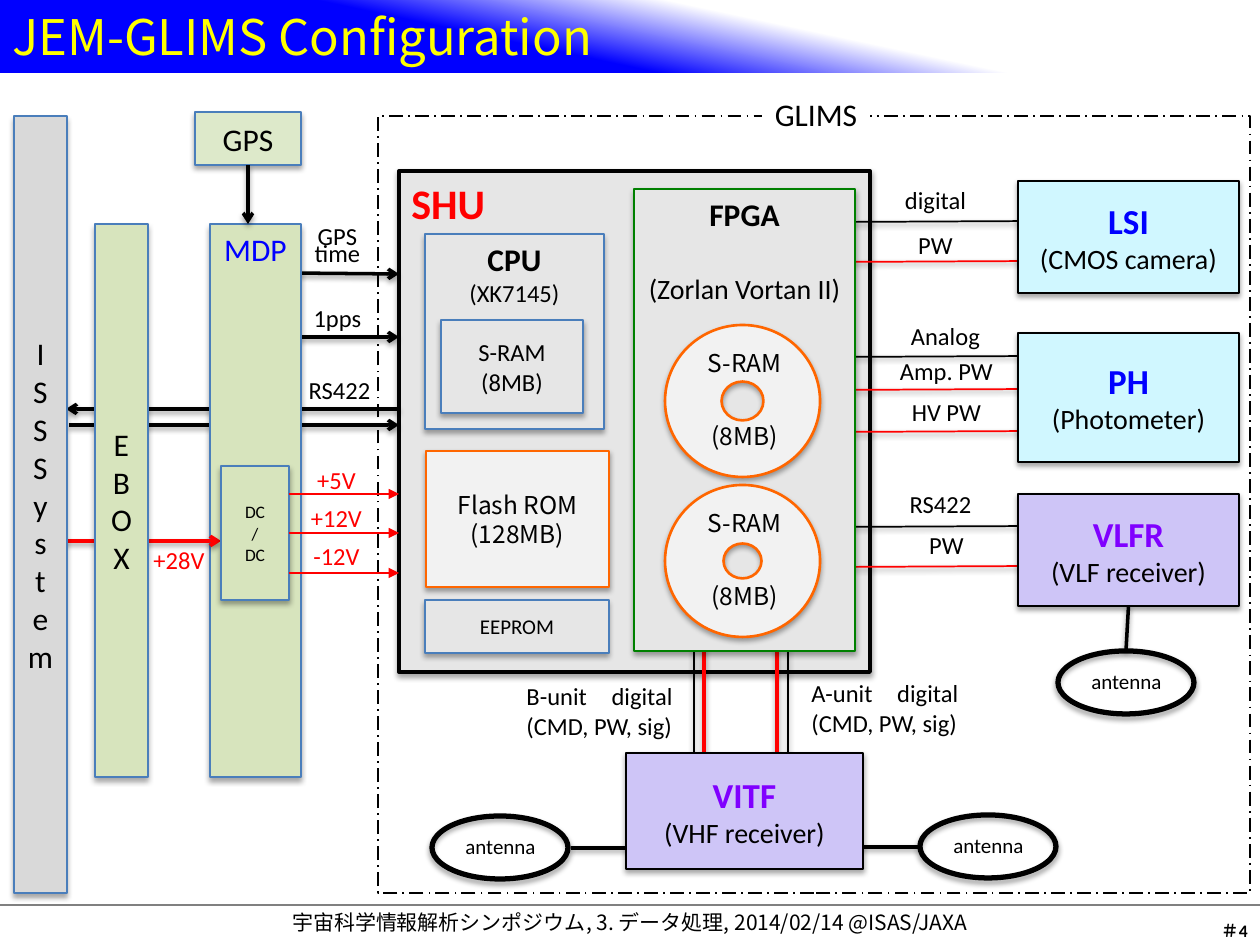
from dataclasses import dataclass

from lxml import etree
from pptx import Presentation
from pptx import util as u
from pptx.dml.color import RGBColor
from pptx.enum import dml, shapes, text
from pptx.oxml.ns import qn

MSO = shapes.MSO_SHAPE
LEFT, CENTER, RIGHT = text.PP_ALIGN.LEFT, text.PP_ALIGN.CENTER, text.PP_ALIGN.RIGHT
TOP, MIDDLE = text.MSO_ANCHOR.TOP, text.MSO_ANCHOR.MIDDLE


@dataclass(frozen=True)
class Theme:
    latin: str = "Calibri"
    cjk: str = "Noto Sans CJK JP"
    black: str = "000000"
    white: str = "FFFFFF"
    red: str = "FF0000"
    blue: str = "0000FF"
    purple: str = "8000FF"
    yellow: str = "FFFF00"
    orange: str = "FF6600"
    green: str = "008000"
    rule: str = "808080"
    edge: str = "4A7EBB"
    board: str = "E6E6E6"
    memory: str = "F2F2F2"
    station: str = "D9D9D9"
    bus: str = "D7E4BD"
    gps: str = "DDE9CA"
    optical: str = "D0F7FF"
    radio: str = "CEC5F7"
    title: int = 28
    heading: int = 24
    unit: int = 20
    block: int = 18
    detail: int = 16
    label: int = 14
    small: int = 12
    tiny: int = 10


T = Theme()


def px(n):
    return u.Emu(round(n * 914400 / 126))


def rgb(value):
    return RGBColor.from_string(value)


def write(tf, paragraphs, size=T.label, color=T.black, bold=False, font=T.latin,
          align=CENTER, anchor=TOP, wrap=True, spacing=None, vert=None):
    """Fill a frame; a paragraph is a string or (string, format overrides)."""
    tf.word_wrap, tf.vertical_anchor = wrap, anchor
    if vert:
        tf._txBody.bodyPr.set("vert", vert)
    if isinstance(paragraphs, str):
        paragraphs = [paragraphs]
    for i, item in enumerate(paragraphs):
        words, own = (item, {}) if isinstance(item, str) else item
        p = tf.paragraphs[0] if i == 0 else tf.add_paragraph()
        p.alignment = align
        if spacing:
            p.line_spacing = u.Pt(spacing)
        if "before" in own:
            p.space_before = u.Pt(own["before"])
        r = p.add_run()
        r.text = words
        r.font.name = font
        r.font.size = u.Pt(own.get("size", size))
        r.font.bold = own.get("bold", bold)
        r.font.color.rgb = rgb(own.get("color", color))
        etree.SubElement(r._r.get_or_add_rPr(), qn("a:ea"), typeface=font)


class Diagram:
    def __init__(self, slide):
        self.s = slide

    def effects(self, sp, shadow, alpha, dist):
        spPr = sp._element.spPr
        for old in spPr.findall(qn("a:effectLst")):
            spPr.remove(old)
        lst = etree.SubElement(spPr, qn("a:effectLst"))
        if shadow:
            out = etree.SubElement(lst, qn("a:outerShdw"), blurRad=str(u.Pt(3.1)),
                                   dist=str(u.Pt(dist)), dir="5400000", rotWithShape="0")
            clr = etree.SubElement(out, qn("a:srgbClr"), val=T.black)
            etree.SubElement(clr, qn("a:alpha"), val=str(alpha * 1000))

    def shape(self, x, y, w, h, fill=None, line=T.edge, width=0.75, kind=MSO.RECTANGLE,
              words=None, shadow=True, dash=None, adj=None, **fmt):
        sp = self.s.shapes.add_shape(kind, px(x), px(y), px(w), px(h))
        if fill:
            sp.fill.solid()
            sp.fill.fore_color.rgb = rgb(fill)
        else:
            sp.fill.background()
        if line:
            sp.line.color.rgb = rgb(line)
            sp.line.width = u.Pt(width)
            if dash:
                sp.line.dash_style = dash
        else:
            sp.line.fill.background()
        if adj:
            sp.adjustments[0] = adj
        sp.shadow.inherit = False
        self.effects(sp, shadow, 35, 1.8)
        if words:
            write(sp.text_frame, words, **fmt)
        return sp

    def label(self, x, y, w, h, words, **fmt):
        write(self.s.shapes.add_textbox(px(x), px(y), px(w), px(h)).text_frame, words, **fmt)

    def line(self, x1, y1, x2, y2, color=T.black, width=2, head=None, shadow=True,
             begin=None, end=None):
        c = self.s.shapes.add_connector(shapes.MSO_CONNECTOR.STRAIGHT,
                                        px(x1), px(y1), px(x2), px(y2))
        c.line.color.rgb = rgb(color)
        c.line.width = u.Pt(width)
        if begin:
            c.begin_connect(*begin)
        if end:
            c.end_connect(*end)
        if head:
            etree.SubElement(c._element.spPr.find(qn("a:ln")), qn("a:tailEnd"), type=head)
        self.effects(c, shadow, 38, 1.6)

    def unit(self, x, y, w, h, name, role, fill, color):
        return self.shape(x, y, w, h, fill, T.black, 1.5, anchor=MIDDLE, size=T.detail,
                          words=[(name, dict(size=T.unit, color=color, bold=True)), role])

    def antenna(self, x, y):
        sp = self.shape(x, y, 136, 63, line=T.black, width=3, kind=MSO.OVAL)
        self.label(x + 20, y + 11, 97, 38, "antenna", size=T.small, wrap=False)
        return sp

    def banner(self, w, h, words):
        sp = self.shape(0, 0, w, h, T.blue, None, shadow=False)
        sp.fill.gradient()
        sp.fill.gradient_angle = 78
        for stop, (color, at) in zip(sp.fill.gradient_stops, [(T.blue, 0.41), (T.white, 0.63)]):
            stop.color.rgb, stop.position = rgb(color), at
        self.label(0, 0, 799, 72, words, size=T.title, color=T.yellow, font=T.cjk, align=LEFT)


def main():
    prs = Presentation()
    prs.slide_width, prs.slide_height = px(1260), px(945)
    d = Diagram(prs.slides.add_slide(prs.slide_layouts[6]))

    # Title and footer
    d.banner(1260, 73, "JEM-GLIMS Configuration")
    d.line(0, 905, 1260, 905, T.rule, 0.75, shadow=False)
    d.label(42, 903, 1176, 38, "宇宙科学情報解析シンポジウム, 3. データ処理, 2014/02/14 @ISAS/JAXA",
            size=T.small, font=T.cjk)
    d.label(906, 914, 354, 34, "＃4", size=T.tiny, bold=True, align=RIGHT)

    # GLIMS boundary
    d.shape(378, 116, 872, 777, line=T.black, width=1, shadow=False,
            dash=dml.MSO_LINE.LONG_DASH_DOT)
    d.shape(762, 89, 108, 50, T.white, None, shadow=False, words="GLIMS", size=T.block,
            wrap=False)

    # SHU board
    d.shape(399, 171, 471, 501, T.board, T.black, 2.25, words="SHU", size=T.heading,
            color=T.red, bold=True, align=LEFT)

    # Signals from FPGA to the sensors: label, its left and top, line height, colour
    for words, x, y, at, color in [
            ("digital", 861, 179, 221, T.black), ("PW", 861, 224, 261, T.red),
            ("Analog", 871, 315, 356, T.black), ("Amp. PW", 872, 350, 389, T.red),
            ("HV PW", 872, 391, 431, T.red),
            ("RS422", 866, 483, 526, T.black), ("PW", 872, 524, 566, T.red)]:
        d.line(1038, at, 833, at + 1, color, 1)
        d.label(x, y, 149, 42, words)

    # Signals from FPGA to VITF
    for x, color, width in [(694, T.black, 1), (704, T.red, 2),
                            (777, T.red, 2), (788, T.black, 1)]:
        d.line(x, 605, x, 790, color, width)
    for x, y, side in [(514, 675, "B"), (799, 672, "A")]:
        d.label(x, y, 198, 72, [side + "-unit　digital", "(CMD, PW, sig)"], align=LEFT)

    # Processor and memories
    d.shape(425, 234, 179, 195, T.board,
            words=[("CPU", dict(size=T.block, bold=True)), "(XK7145)"])
    d.shape(441, 320, 142, 93, T.board, words=["S-RAM", "(8MB)"], anchor=MIDDLE)
    d.shape(426, 451, 183, 136, T.memory, T.orange, 1.5, words="Flash ROM (128MB)",
            font=T.cjk, anchor=MIDDLE)
    d.shape(425, 600, 184, 53, T.board, words="EEPROM", size=T.small, anchor=MIDDLE)

    # FPGA and its memories
    d.shape(634, 189, 221, 462, T.board, T.green, 1.5, size=T.detail,
            words=[("FPGA", dict(size=T.block, bold=True)),
                   ("(Zorlan Vortan II)", dict(before=22))])
    for y, hole in [(325, 0.372), (485, 0.385)]:
        d.shape(665, y, 155, 152, T.memory, T.orange, 1.5, MSO.DONUT, adj=hole)
        d.label(686, y + 17, 117, 123, ["S-RAM", ("(8MB)", dict(before=25))],
                font=T.cjk, wrap=False)

    # Sensors
    d.unit(1018, 181, 221, 112, "LSI", "(CMOS camera)", T.optical, T.blue)
    d.unit(1018, 333, 221, 129, "PH", "(Photometer)", T.optical, T.blue)
    vlfr = d.unit(1018, 494, 221, 112, "VLFR", "(VLF receiver)", T.radio, T.purple)

    # Antennas
    d.line(571, 848, 745, 848)
    d.line(918, 847, 743, 847)
    d.unit(626, 753, 237, 116, "VITF", "(VHF receiver)", T.radio, T.purple)
    d.antenna(432, 816)
    d.antenna(920, 815)
    mast = d.antenna(1058, 651)
    d.line(1128, 606, 1126, 651, begin=(vlfr, 2), end=(mast, 0))

    # Data links to SHU
    d.line(399, 409, 66, 409, head="arrow")
    d.line(69, 425, 399, 425, head="arrow")
    d.line(290, 273, 399, 274, head="arrow")
    d.line(291, 337, 399, 337, head="arrow")

    # MDP and GPS
    d.shape(210, 224, 91, 553, T.bus, words="MDP", size=T.block, color=T.blue)
    gps = d.shape(195, 112, 106, 53, T.gps, words="GPS", size=T.block, anchor=MIDDLE)
    d.line(248, 165, 248, 224, head="arrow", begin=(gps, 2))
    d.label(292, 227, 91, 50, ["GPS", "time"], spacing=9.8)
    d.label(292, 297, 91, 43, "1pps")
    d.label(294, 369, 91, 43, "RS422")

    # Power supply
    d.line(57, 541, 221, 541, T.red, head="arrow")
    d.label(126, 539, 106, 42, "+28V", color=T.red)
    dcdc = d.shape(221, 466, 68, 134, T.bus, words=["DC", "/", "DC"], size=T.tiny,
                   anchor=MIDDLE)
    for y, begin in [(494, None), (533, (dcdc, 3)), (573, None)]:
        d.line(289, y, 399, y, T.red, 1.5, "triangle", shadow=False, begin=begin)
    d.label(291, 450, 91, 127, ["+5V", "+12V", "-12V"], color=T.red, spacing=21.8)

    # Station side
    for x, y, h, fill, words in [(95, 224, 553, T.bus, "E B O X"),
                                 (14, 116, 777, T.station, "I S S S y s t e m")]:
        d.shape(x, y, 53, h, fill, words=words, size=T.block, anchor=MIDDLE,
                vert="wordArtVertRtl")

    prs.save("out.pptx")


if __name__ == "__main__":
    main()
